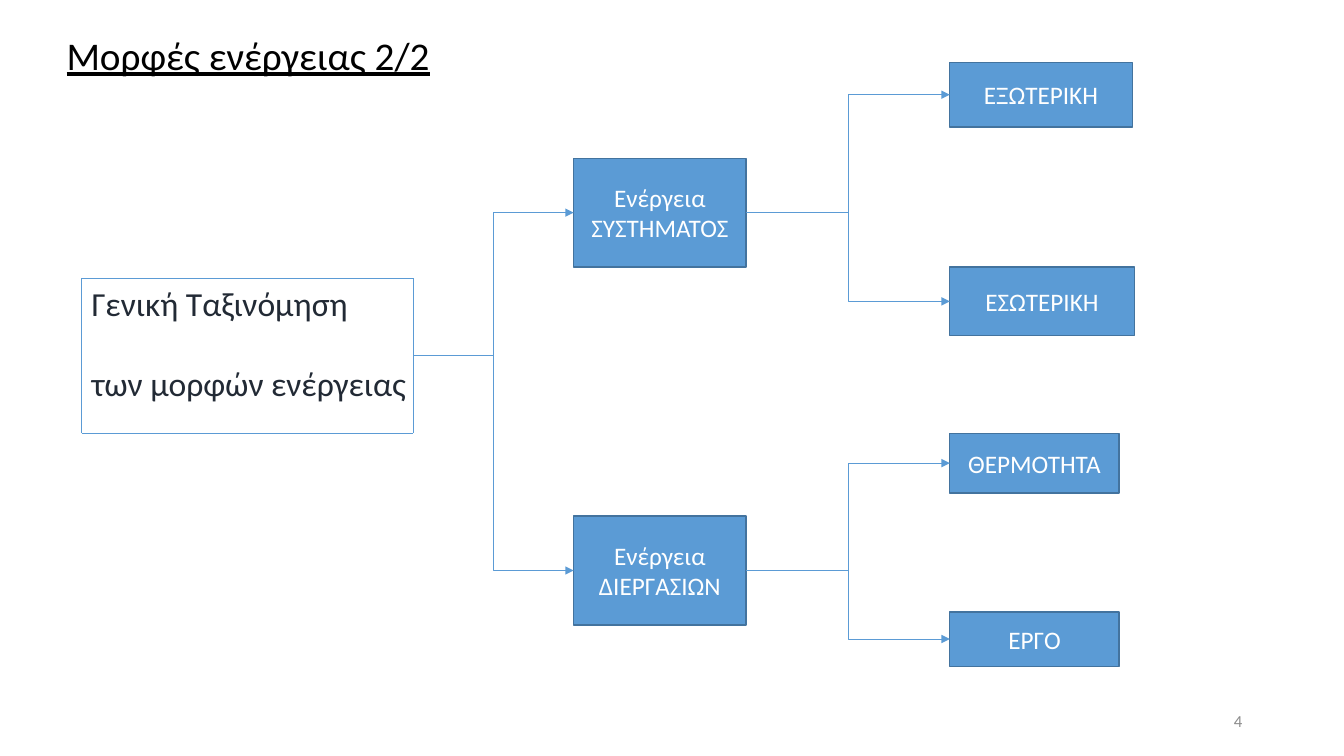
from dataclasses import dataclass

from lxml import etree
from pptx import Presentation
from pptx.dml.color import RGBColor
from pptx.enum.shapes import MSO_CONNECTOR, MSO_SHAPE
from pptx.enum.text import MSO_ANCHOR, MSO_AUTO_SIZE, PP_ALIGN
from pptx.oxml.ns import qn
from pptx.util import Inches, Pt

ELBOW, LINE = MSO_CONNECTOR.ELBOW, MSO_CONNECTOR.STRAIGHT
RECT = MSO_SHAPE.RECTANGLE
TOP, MIDDLE = MSO_ANCHOR.TOP, MSO_ANCHOR.MIDDLE
LEFT, CENTER, RIGHT = PP_ALIGN.LEFT, PP_ALIGN.CENTER, PP_ALIGN.RIGHT
GROW = MSO_AUTO_SIZE.SHAPE_TO_FIT_TEXT

FONT = "Calibri"
COLORS = {
    "title": "000000", "root": "222A35", "label": "FFFFFF",
    "fill": "5B9BD5", "edge": "43739E", "number": "8C8C8C",
}

# Grid: ten columns and ten rows to the inch
COLS, ROWS = 133.3, 75
CELL = Inches(0.1)
MID_COL, MID_WIDE, MID_HIGH = 56.9, 17.1, 10.8
END_COL = 94.2


@dataclass
class Leaf:
    text: str
    row: float
    wide: float
    high: float


@dataclass
class Branch:
    text: str
    row: float
    leaves: list[Leaf]


@dataclass
class Frame:
    col: float
    row: float
    wide: float
    high: float

    @property
    def right(self) -> float:
        return self.col + self.wide

    @property
    def base(self) -> float:
        return self.row + self.high

    @property
    def mid(self) -> float:
        return self.row + self.high / 2


TREE = [
    Branch("Ενέργεια ΣΥΣΤΗΜΑΤΟΣ", 15.7, [
        Leaf("ΕΞΩΤΕΡΙΚΗ", 6.2, 18.1, 6.4),
        Leaf("ΕΣΩΤΕΡΙΚΗ", 26.5, 18.3, 6.8),
    ]),
    Branch("Ενέργεια ΔΙΕΡΓΑΣΙΩΝ", 51.2, [
        Leaf("ΘΕΡΜΟΤΗΤΑ", 43, 16.8, 5.9),
        Leaf("ΕΡΓΟ", 60.7, 16.8, 5.4),
    ]),
]
ROOT = Frame(8.1, 27.6, 32.9, 15.4)


def span(count: float) -> int:
    return round(count * CELL)


def color(name: str) -> RGBColor:
    return RGBColor.from_string(COLORS[name])


def style(frame, size: float, name: str, align=LEFT, anchor=TOP) -> None:
    frame.vertical_anchor = anchor
    for para in frame.paragraphs:
        para.alignment = align
        for run in para.runs:
            run.font.name = FONT
            run.font.size = Pt(size)
            run.font.color.rgb = color(name)


def add_text(slide, text: str, box: Frame):
    shape = slide.shapes.add_textbox(
        span(box.col), span(box.row), span(box.wide), span(box.high))
    shape.text_frame.word_wrap = True
    shape.text_frame.text = text
    return shape.text_frame


def add_box(slide, text: str, box: Frame) -> None:
    shape = slide.shapes.add_shape(
        RECT, span(box.col), span(box.row), span(box.wide), span(box.high))
    shape.shadow.inherit = False
    shape.fill.solid()
    shape.fill.fore_color.rgb = color("fill")
    shape.line.color.rgb = color("edge")
    shape.line.width = Pt(1)
    shape.text_frame.word_wrap = True
    shape.text_frame.text = text
    style(shape.text_frame, 18, "label", CENTER, MIDDLE)


def add_line(slide, kind, start: tuple[float, float],
             end: tuple[float, float], arrow: bool = False) -> None:
    line = slide.shapes.add_connector(
        kind, *(span(count) for count in start + end))
    line.line.color.rgb = color("fill")
    line.line.width = Pt(0.5)
    if arrow:
        etree.SubElement(line.line._get_or_add_ln(), qn("a:tailEnd"),
                         type="triangle")
    etree.SubElement(line._element.spPr, qn("a:effectLst"))


def link(slide, source: Frame, target: Frame) -> None:
    add_line(slide, ELBOW, (source.right, source.mid),
             (target.col, target.mid), arrow=True)


def add_title(slide) -> None:
    title = slide.shapes.title
    title.left, title.top = span(5.6), span(2.6)
    title.width, title.height = span(39.4), span(5.7)
    frame = title.text_frame
    frame.text = "Μορφές ενέργειας 2/2"
    frame.word_wrap = False
    frame.auto_size = GROW
    style(frame, 28, "title")
    frame.paragraphs[0].runs[0].font.underline = True


def add_root(slide) -> None:
    text = "Γενική Ταξινόμηση\nτων μορφών ενέργειας"
    frame = add_text(slide, text, Frame(ROOT.col, ROOT.row, 34.4, 13.1))
    style(frame, 24, "root")
    frame.paragraphs[1].space_before = Pt(28)
    # Border around the root text
    for row in (ROOT.row, ROOT.base):
        add_line(slide, LINE, (ROOT.col, row), (ROOT.right, row))
    for col in (ROOT.col, ROOT.right):
        add_line(slide, LINE, (col, ROOT.row), (col, ROOT.base))


def add_tree(slide) -> None:
    for branch in TREE:
        node = Frame(MID_COL, branch.row, MID_WIDE, MID_HIGH)
        add_box(slide, branch.text, node)
        link(slide, ROOT, node)
        for leaf in branch.leaves:
            end = Frame(END_COL, leaf.row, leaf.wide, leaf.high)
            add_box(slide, leaf.text, end)
            link(slide, node, end)


def main() -> None:
    deck = Presentation()
    deck.slide_width, deck.slide_height = span(COLS), span(ROWS)
    slide = deck.slides.add_slide(deck.slide_layouts[5])
    add_title(slide)
    add_root(slide)
    add_tree(slide)
    # Slide number
    number = add_text(slide, "4", Frame(END_COL, 69.5, 30, 4))
    style(number, 12, "number", RIGHT, MIDDLE)
    deck.save("out.pptx")


if __name__ == "__main__":
    main()
